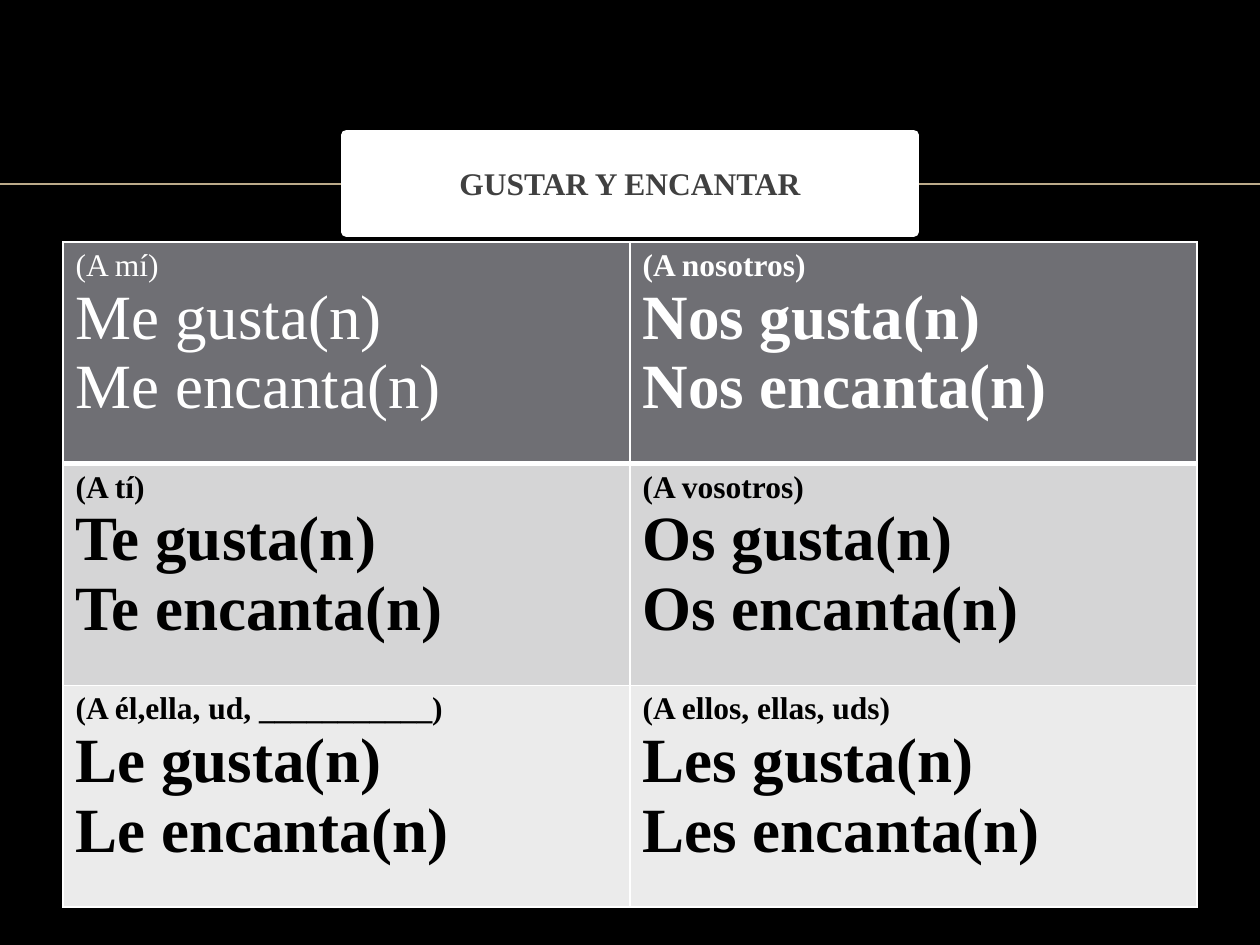
from lxml import etree
from pptx import Presentation
from pptx.dml.color import RGBColor
from pptx.enum.shapes import MSO_CONNECTOR
from pptx.enum.text import MSO_ANCHOR, MSO_AUTO_SIZE, PP_ALIGN
from pptx.oxml.ns import qn
from pptx.util import Inches, Pt

STRAIGHT = MSO_CONNECTOR.STRAIGHT
MIDDLE = MSO_ANCHOR.MIDDLE
NO_AUTOFIT = MSO_AUTO_SIZE.NONE
CENTER = PP_ALIGN.CENTER
TITLE_ONLY = 5

TITLE = "GUSTAR Y ENCANTAR"
VERBS = ("gusta(n)", "encanta(n)")
PRONOUNS = [
    [("(A mí)", "Me"), ("(A nosotros)", "Nos")],
    [("(A tí)", "Te"), ("(A vosotros)", "Os")],
    [("(A él,ella, ud, ___________)", "Le"), ("(A ellos, ellas, uds)", "Les")],
]

THEME = {
    "font": "Times New Roman",
    "background": "000000",
    "rule": "BBAA8A",
    "white": "FFFFFF",
    "title": "404040",
    "row_fills": ("6F6F74", "D5D5D6", "EBEBEB"),
    "row_inks": ("FFFFFF", "000000", "000000"),
    "small": 18,
    "large": 36,
}

SLIDE_W, SLIDE_H = 10, 7.5
TITLE_W, TITLE_H, TITLE_TOP = 4.5, 0.77, 1.07
RULE_Y = 1.46
TABLE_W, TABLE_TOP, ROW_H = 9, 1.92, 1.76


def rgb(value):
    return RGBColor.from_string(value)


def write(paragraph, text, size, color, bold=True, align=None, before=0):
    paragraph.alignment = align
    paragraph.space_before = Pt(before)
    run = paragraph.add_run()
    run.text = text
    run.font.name = THEME["font"]
    run.font.size = Pt(size)
    run.font.bold = bold
    run.font.color.rgb = rgb(color)


def set_borders(cell, bottom):
    properties = cell._tc.get_or_add_tcPr()
    for side, width in (("L", 1), ("R", 1), ("T", 1), ("B", bottom)):
        border = etree.SubElement(properties, qn(f"a:ln{side}"), w=str(Pt(width)))
        fill = etree.SubElement(border, qn("a:solidFill"))
        etree.SubElement(fill, qn("a:srgbClr"), val=THEME["white"])


def add_heading(slide):
    title = slide.shapes.title
    title.left, title.top = Inches((SLIDE_W - TITLE_W) / 2), Inches(TITLE_TOP)
    title.width, title.height = Inches(TITLE_W), Inches(TITLE_H)
    title.fill.solid()
    title.fill.fore_color.rgb = rgb(THEME["white"])
    title.line.color.rgb = rgb(THEME["white"])
    title.line.width = Pt(6)
    frame = title.text_frame
    frame.auto_size = NO_AUTOFIT
    frame.word_wrap = True
    frame.vertical_anchor = MIDDLE
    write(frame.paragraphs[0], TITLE, THEME["small"], THEME["title"],
          align=CENTER, before=4)

    rule = slide.shapes.add_connector(
        STRAIGHT, 0, Inches(RULE_Y), Inches(SLIDE_W), Inches(RULE_Y))
    rule.line.color.rgb = rgb(THEME["rule"])
    rule.line.width = Pt(1)
    etree.SubElement(rule.element.spPr, qn("a:effectLst"))
    title.element.addprevious(rule.element)


def add_pronoun_table(slide):
    rows, columns = len(PRONOUNS), len(PRONOUNS[0])
    table = slide.shapes.add_table(
        rows, columns, Inches((SLIDE_W - TABLE_W) / 2), Inches(TABLE_TOP),
        Inches(TABLE_W), Inches(ROW_H * rows)).table
    for r, people in enumerate(PRONOUNS):
        ink = THEME["row_inks"][r]
        for c, (person, pronoun) in enumerate(people):
            cell = table.cell(r, c)
            set_borders(cell, bottom=3 if r == 0 else 1)
            cell.fill.solid()
            cell.fill.fore_color.rgb = rgb(THEME["row_fills"][r])
            bold = (r, c) != (0, 0)
            frame = cell.text_frame
            write(frame.paragraphs[0], person, THEME["small"], ink, bold=bold)
            for verb in VERBS:
                write(frame.add_paragraph(), f"{pronoun} {verb}",
                      THEME["large"], ink, bold=bold)


def main():
    deck = Presentation()
    deck.slide_width, deck.slide_height = Inches(SLIDE_W), Inches(SLIDE_H)
    slide = deck.slides.add_slide(deck.slide_layouts[TITLE_ONLY])
    slide.background.fill.solid()
    slide.background.fill.fore_color.rgb = rgb(THEME["background"])
    add_heading(slide)
    add_pronoun_table(slide)
    deck.save("out.pptx")


if __name__ == "__main__":
    main()
